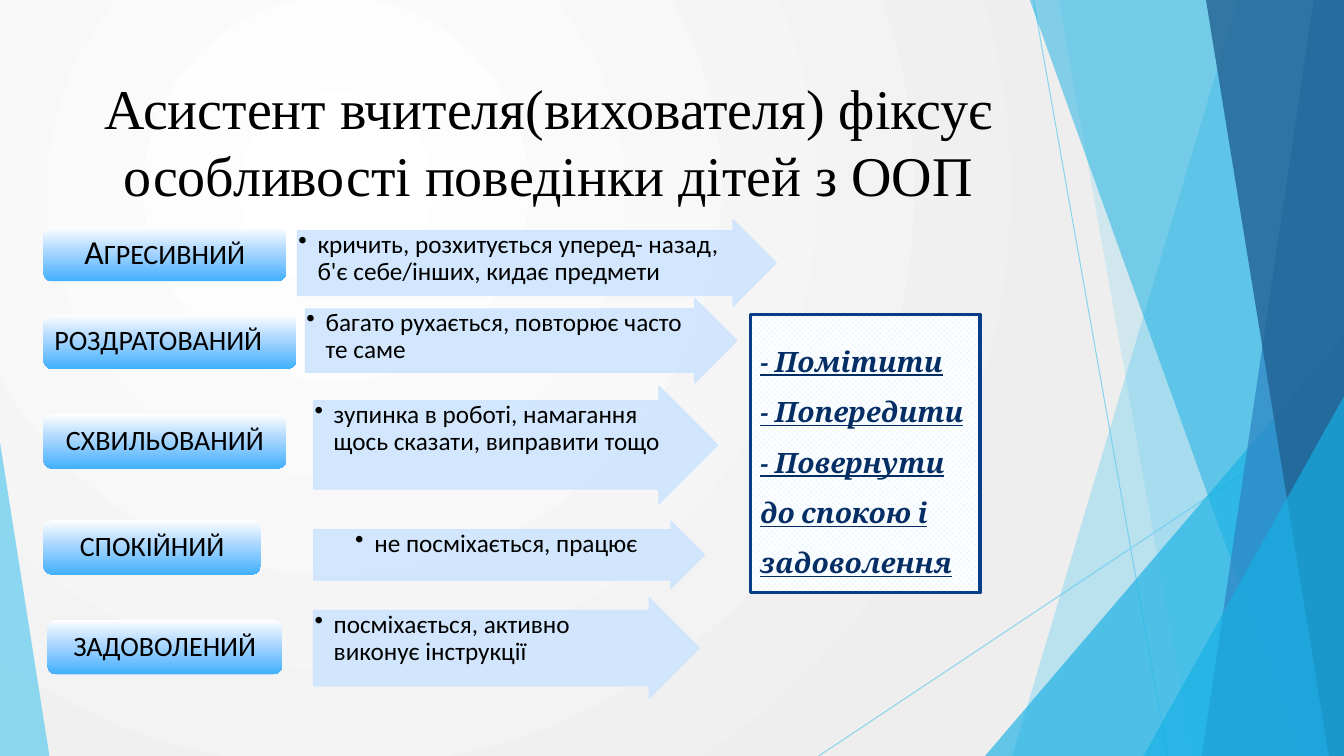
from dataclasses import dataclass

from lxml import etree
from pptx import Presentation
from pptx.dml.color import RGBColor
from pptx.enum.dml import MSO_PATTERN
from pptx.enum.shapes import MSO_CONNECTOR, MSO_SHAPE
from pptx.enum.text import MSO_ANCHOR, PP_ALIGN
from pptx.oxml import parse_xml
from pptx.oxml.ns import nsdecls, qn
from pptx.util import Inches, Pt

LEFT, CENTER = PP_ALIGN.LEFT, PP_ALIGN.CENTER
TOP, MIDDLE, BOTTOM = MSO_ANCHOR.TOP, MSO_ANCHOR.MIDDLE, MSO_ANCHOR.BOTTOM
TRIANGLE, RECTANGLE = MSO_SHAPE.ISOSCELES_TRIANGLE, MSO_SHAPE.RECTANGLE
ARROW, ROUNDED = MSO_SHAPE.RIGHT_ARROW, MSO_SHAPE.ROUNDED_RECTANGLE
STRAIGHT = MSO_CONNECTOR.STRAIGHT
DIAMONDS = MSO_PATTERN.from_xml("openDmnd")

BLACK = RGBColor(0x00, 0x00, 0x00)
WHITE = RGBColor(0xFF, 0xFF, 0xFF)
GREY = RGBColor(0xEE, 0xEE, 0xEE)
SKY = RGBColor(0x5F, 0xCB, 0xEF)
CYAN = RGBColor(0x17, 0xB0, 0xE4)
BLUE = RGBColor(0x2E, 0x83, 0xC3)
DEEP_BLUE = RGBColor(0x22, 0x62, 0x92)
ARROW_BLUE = RGBColor(0xCE, 0xE5, 0xFE)
LABEL_MID = RGBColor(0xAC, 0xD7, 0xFF)
LABEL_END = RGBColor(0x42, 0xB0, 0xFD)
PATTERN_BLUE = RGBColor(0xD6, 0xF0, 0xFF)
FRAME_BLUE = RGBColor(0x07, 0x3E, 0x87)
NAVY = RGBColor(0x05, 0x2E, 0x65)

WIDTH, HEIGHT = 13.33, 7.5
SHAFT, HEAD = 0.75, 0.5
LABEL_HEIGHT, LABEL_MARGIN = 0.54, 0.03


@dataclass
class Panel:
    top_x: float
    bottom_x: float
    color: RGBColor
    opacity: int


@dataclass
class Corner:
    left: float
    top: float
    width: float
    apex: float
    color: RGBColor
    opacity: int


@dataclass
class Behaviour:
    label: str
    label_box: tuple[float, float, float]  # left, top, width
    signs: str
    arrow_box: tuple[float, float, float, float]
    label_align: PP_ALIGN = CENTER
    signs_align: PP_ALIGN = LEFT
    initial_size: int = 20


# Facets from back to front
FACETS = [
    Panel(12.28, 10.04, SKY, 36),
    Panel(10.5, 11.83, SKY, 20),
    Corner(9.77, 3.33, 3.56, 1, CYAN, 66),
    Panel(10.21, 12.91, CYAN, 50),
    Panel(13.03, 11.92, BLUE, 70),
    Panel(11.96, 13.18, DEEP_BLUE, 80),
    Corner(11.34, 3.93, 1.99, 1, CYAN, 66),
    Corner(0, 4.39, 0.49, 0, SKY, 70),
]

BEHAVIOURS = [
    Behaviour("АГРЕСИВНИЙ", (0.43, 2.25, 2.41),
              "кричить, розхитується уперед- назад, б'є себе/інших, кидає предмети",
              (2.95, 2.18, 4.75, 0.86), initial_size=24),
    Behaviour("РОЗДРАТОВАНИЙ", (0.43, 3.12, 2.51),
              "багато рухається, повторює часто те саме",
              (3.03, 2.96, 4.28, 0.84), label_align=LEFT),
    Behaviour("СХВИЛЬОВАНИЙ", (0.43, 4.11, 2.41),
              "зупинка в роботі, намагання щось сказати, виправити тощо",
              (3.11, 3.83, 4.01, 1.17)),
    Behaviour("СПОКІЙНИЙ", (0.43, 5.16, 2.16), "не посміхається, працює",
              (3.11, 5.17, 3.88, 0.67), signs_align=CENTER),
    Behaviour("ЗАДОВОЛЕНИЙ", (0.47, 6.15, 2.33),
              "посміхається, активно виконує інструкції",
              (3.11, 5.93, 3.83, 1)),
]

GOALS = ["- Помітити", "- Попередити", "- Повернути до спокою і задоволення"]


def set_opacity(element, percent: int) -> None:
    for color in element.spPr.iter(qn("a:srgbClr")):
        etree.SubElement(color, qn("a:alpha")).set("val", str(percent * 1000))


def set_gradient(element, stops: list[tuple[int, RGBColor]], direction: str) -> None:
    gradient = element.find(".//" + qn("a:gradFill"))
    stop_xml = "".join(
        f'<a:gs pos="{position * 1000}"><a:srgbClr val="{color}"/></a:gs>'
        for position, color in stops)
    new_gradient = parse_xml(
        f'<a:gradFill {nsdecls("a")} rotWithShape="1">'
        f"<a:gsLst>{stop_xml}</a:gsLst>{direction}</a:gradFill>")
    gradient.getparent().replace(gradient, new_gradient)


def add_preset(slide, kind, left: float, top: float, width: float, height: float):
    shape = slide.shapes.add_shape(
        kind, Inches(left), Inches(top), Inches(width), Inches(height))
    shape.shadow.inherit = False
    shape.line.fill.background()
    return shape


def fill_facet(shape, color: RGBColor, opacity: int) -> None:
    shape.shadow.inherit = False
    shape.fill.solid()
    shape.fill.fore_color.rgb = color
    shape.line.fill.background()
    set_opacity(shape.element, opacity)


def add_facet(slide, facet: Panel | Corner) -> None:
    if isinstance(facet, Corner):
        shape = add_preset(slide, TRIANGLE, facet.left, facet.top,
                           facet.width, HEIGHT - facet.top)
        shape.adjustments[0] = facet.apex
    else:
        builder = slide.shapes.build_freeform(Inches(facet.top_x), Inches(-0.01))
        builder.add_line_segments(
            [(Inches(x), Inches(y)) for x, y in
             ((WIDTH, -0.01), (WIDTH, HEIGHT), (facet.bottom_x, HEIGHT))])
        shape = builder.convert_to_shape()
    fill_facet(shape, facet.color, facet.opacity)


def add_ray(slide, x1: float, y1: float, x2: float, y2: float) -> None:
    ray = slide.shapes.add_connector(
        STRAIGHT, Inches(x1), Inches(y1), Inches(x2), Inches(y2))
    ray.line.color.rgb = SKY
    ray.line.width = Pt(0.75)
    set_opacity(ray.element, 70)
    etree.SubElement(ray.element.spPr, qn("a:effectLst"))


def add_text(slide, box: tuple[float, float, float, float], text: str, font: str,
             size: int, align, anchor, margins: tuple[float, float],
             spacing: float = 0.9):
    frame = slide.shapes.add_textbox(*map(Inches, box)).text_frame
    frame.word_wrap = True
    frame.vertical_anchor = anchor
    frame.margin_left = frame.margin_right = Inches(margins[0])
    frame.margin_top = frame.margin_bottom = Inches(margins[1])
    paragraph = frame.paragraphs[0]
    paragraph.alignment, paragraph.line_spacing = align, spacing
    paragraph.font.name, paragraph.font.size = font, Pt(size)
    paragraph.font.color.rgb = BLACK
    paragraph.add_run().text = text
    return paragraph


def add_behaviour(slide, behaviour: Behaviour) -> None:
    # Arrow with the signs on its shaft
    left, top, width, height = behaviour.arrow_box
    arrow = add_preset(slide, ARROW, left, top, width, height)
    arrow.adjustments[0], arrow.adjustments[1] = SHAFT, HEAD
    arrow.fill.solid()
    arrow.fill.fore_color.rgb = arrow.line.color.rgb = ARROW_BLUE
    arrow.line.width = Pt(0.75)
    set_opacity(arrow.element, 90)
    shaft_box = (left, top + height * (1 - SHAFT) / 2,
                 width - height * HEAD * SHAFT, height * SHAFT)
    signs = add_text(slide, shaft_box, behaviour.signs, "Calibri", 18,
                     behaviour.signs_align, TOP, (0.01, 0.01))
    properties = signs._p.get_or_add_pPr()
    properties.set("marL", str(Inches(0.19)))
    properties.set("indent", str(Inches(-0.19)))
    bullet = parse_xml(f'<a:buChar {nsdecls("a")} char="•"/>')
    properties.find(qn("a:defRPr")).addprevious(bullet)

    # Label
    left, top, width = behaviour.label_box
    label = add_preset(slide, ROUNDED, left, top, width, LABEL_HEIGHT)
    label.fill.gradient()
    set_gradient(label.element, [(0, WHITE), (44, LABEL_MID), (100, LABEL_END)],
                 '<a:lin ang="5400000" scaled="0"/>')
    label_box = (left + LABEL_MARGIN, top + LABEL_MARGIN,
                 width - 2 * LABEL_MARGIN, LABEL_HEIGHT - 2 * LABEL_MARGIN)
    name = add_text(slide, label_box, behaviour.label[0], "Calibri", 20,
                    behaviour.label_align, MIDDLE, (0.08, 0.04))
    name.runs[0].font.size = Pt(behaviour.initial_size)
    name.add_run().text = behaviour.label[1:]


def add_goals(slide) -> None:
    panel = add_preset(slide, RECTANGLE, 7.44, 3.12, 2.28, 2.76)
    panel.fill.patterned()
    panel.fill.pattern = DIAMONDS
    panel.fill.fore_color.rgb, panel.fill.back_color.rgb = PATTERN_BLUE, WHITE
    panel.line.color.rgb, panel.line.width = FRAME_BLUE, Pt(2.25)
    frame = panel.text_frame
    frame.word_wrap, frame.vertical_anchor = True, MIDDLE
    frame.text = "\n".join(GOALS)
    for paragraph in frame.paragraphs:
        paragraph.alignment, paragraph.line_spacing = LEFT, 1.5
        font = paragraph.font
        font.name, font.size, font.color.rgb = "Cambria", Pt(20), NAVY
        font.bold = font.italic = font.underline = True


def main() -> None:
    presentation = Presentation()
    presentation.slide_width, presentation.slide_height = Inches(WIDTH), Inches(HEIGHT)
    slide = presentation.slides.add_slide(presentation.slide_layouts[6])

    # Background
    slide.background.fill.gradient()
    set_gradient(slide.element, [(0, WHITE), (100, GREY)],
                 '<a:path path="circle"><a:fillToRect l="50000" t="50000" '
                 'r="100000" b="100000"/></a:path>')
    add_ray(slide, 10.25, 0, 11.58, HEIGHT)
    add_ray(slide, WIDTH, 4.03, 8.12, HEIGHT)
    for facet in FACETS:
        add_facet(slide, facet)

    # Content
    add_text(slide, (0.74, 0.67, 9.4, 1.44),
             "Асистент вчителя(вихователя) фіксує особливості поведінки дітей з ООП",
             "Times New Roman", 40, CENTER, BOTTOM, (0.1, 0.05), 1.0)
    for behaviour in BEHAVIOURS:
        add_behaviour(slide, behaviour)
    add_goals(slide)
    presentation.save("out.pptx")


if __name__ == "__main__":
    main()
